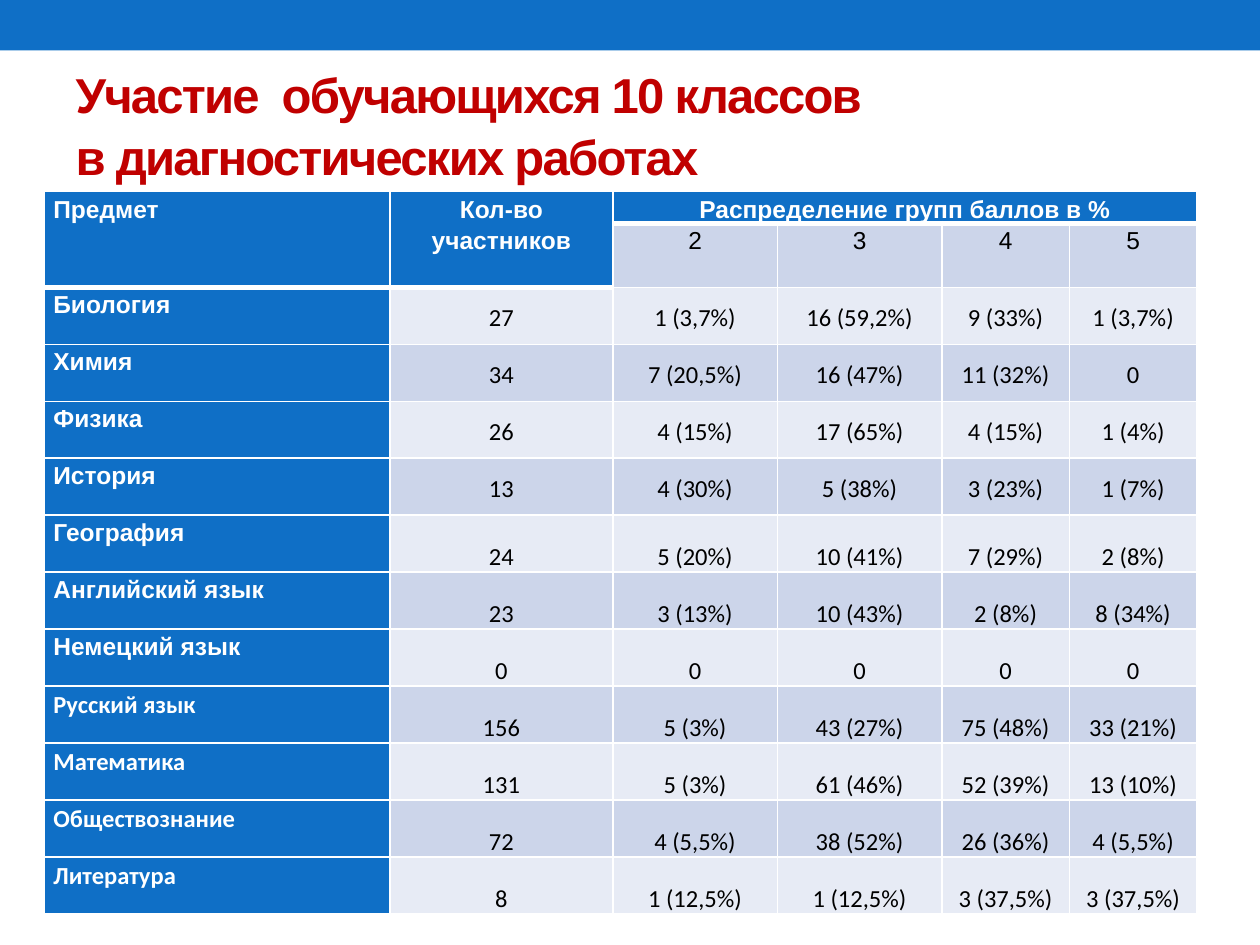
import pptx
import pptx.util
import pptx.dml.color
import pptx.enum.shapes
import pptx.enum.text
import pptx.oxml
import pptx.oxml.ns

Pt = pptx.util.Pt
ALIGN = pptx.enum.text.PP_ALIGN
ANCHOR = pptx.enum.text.MSO_ANCHOR

# Content
TITLE = ["Участие  обучающихся 10 классов", "в диагностических работах"]
SUBJECT_HEAD = ["Предмет"]
COUNT_HEAD = ["Кол-во", "участников"]
GROUP_HEAD = ["Распределение групп баллов в %"]
GRADES = ["2", "3", "4", "5"]
RESULTS = [
    ("Биология", "27", "1 (3,7%)", "16 (59,2%)", "9 (33%)", "1 (3,7%)"),
    ("Химия", "34", "7 (20,5%)", "16 (47%)", "11 (32%)", "0"),
    ("Физика", "26", "4 (15%)", "17 (65%)", "4 (15%)", "1 (4%)"),
    ("История", "13", "4 (30%)", "5 (38%)", "3 (23%)", "1 (7%)"),
    ("География", "24", "5 (20%)", "10 (41%)", "7 (29%)", "2 (8%)"),
    ("Английский язык", "23", "3 (13%)", "10 (43%)", "2 (8%)", "8 (34%)"),
    ("Немецкий язык", "0", "0", "0", "0", "0"),
    ("Русский язык", "156", "5 (3%)", "43 (27%)", "75 (48%)", "33 (21%)"),
    ("Математика", "131", "5 (3%)", "61 (46%)", "52 (39%)", "13 (10%)"),
    ("Обществознание", "72", "4 (5,5%)", "38 (52%)", "26 (36%)", "4 (5,5%)"),
    ("Литература", "8", "1 (12,5%)", "1 (12,5%)", "3 (37,5%)", "3 (37,5%)"),
]
MIDDLE_ROWS = 4    # later results sit at the bottom of their cells
ARIAL_SUBJECTS = 7  # later subjects are set in Calibri

COLORS = {"blue": "0F6FC6", "red": "C00000", "white": "FFFFFF",
          "black": "000000", "dark band": "CCD5EA", "light band": "E7EBF5"}
COLUMN_WIDTHS = [197.3, 127.4, 94, 94, 72.9, 72.9]
HEAD_HEIGHTS = [17, 36.6]
RESULT_HEIGHT = 32.55


def rgb(name):
    return pptx.dml.color.RGBColor.from_string(COLORS[name])


def set_borders(cell, bottom):
    properties = cell._tc.get_or_add_tcPr()
    for side, width in (("L", 1), ("R", 1), ("T", 1), ("B", bottom)):
        properties.append(pptx.oxml.parse_xml(
            f'<a:ln{side} {pptx.oxml.ns.nsdecls("a")} w="{Pt(width)}">'
            f'<a:solidFill><a:srgbClr val="{COLORS["white"]}"/></a:solidFill>'
            f'</a:ln{side}>'))


def style_cell(cell, fill, bottom=1):
    set_borders(cell, bottom)
    cell.fill.solid()
    cell.fill.fore_color.rgb = rgb(fill)
    cell.margin_left = cell.margin_right = Pt(5)
    cell.margin_top = cell.margin_bottom = 0


def write_cell(cell, lines, align, font="Arial", color="black", bold=False,
               anchor=ANCHOR.TOP):
    cell.vertical_anchor = anchor
    frame = cell.text_frame
    for index, line in enumerate(lines):
        para = frame.add_paragraph() if index else frame.paragraphs[0]
        para.alignment = align
        para.line_spacing = 1.15
        span = para.add_run()
        span.text = line
        span.font.name = font
        span.font.size = Pt(14)
        span.font.bold = bold
        span.font.color.rgb = rgb(color)


deck = pptx.Presentation()
deck.slide_width, deck.slide_height = Pt(720), Pt(540)
page = deck.slides.add_slide(deck.slide_layouts[5])

# Top banner
banner = page.shapes.add_shape(pptx.enum.shapes.MSO_SHAPE.RECTANGLE,
                               0, 0, Pt(720), Pt(28.8))
banner.shadow.inherit = False
banner.fill.solid()
banner.fill.fore_color.rgb = rgb("blue")
banner.line.fill.background()

# Title
title = page.shapes.title
title.left, title.top, title.width, title.height = Pt(36), Pt(31.7), Pt(648), Pt(77.8)
title.text_frame.auto_size = pptx.enum.text.MSO_AUTO_SIZE.NONE
title.text_frame.vertical_anchor = ANCHOR.MIDDLE
para = title.text_frame.paragraphs[0]
para.alignment = ALIGN.LEFT
para.line_spacing = 1.05
for index, line in enumerate(TITLE):
    if index:
        para.add_line_break()
    span = para.add_run()
    span.text = line
    span.font.name = "Arial"
    span.font.size = Pt(28)
    span.font.bold = True
    span.font.color.rgb = rgb("red")
    span.font._element.set("spc", "-100")

# Table grid
heights = HEAD_HEIGHTS + [RESULT_HEIGHT] * len(RESULTS)
table = page.shapes.add_table(len(heights), len(COLUMN_WIDTHS), Pt(25.5), Pt(109.5),
                              Pt(sum(COLUMN_WIDTHS)), Pt(sum(heights))).table
for column, width in zip(table.columns, COLUMN_WIDTHS):
    column.width = Pt(width)
for row, height in zip(table.rows, heights):
    row.height = Pt(height)

# Header rows
for row in range(2):
    for column in range(len(COLUMN_WIDTHS)):
        is_grade = row == 1 and column > 1
        style_cell(table.cell(row, column), "dark band" if is_grade else "blue",
                   1 if is_grade else 3)
table.cell(0, 0).merge(table.cell(1, 0))
table.cell(0, 1).merge(table.cell(1, 1))
table.cell(0, 2).merge(table.cell(0, 5))
heads = [(SUBJECT_HEAD, ALIGN.LEFT), (COUNT_HEAD, ALIGN.CENTER), (GROUP_HEAD, ALIGN.CENTER)]
for column, (lines, align) in enumerate(heads):
    write_cell(table.cell(0, column), lines, align, color="white", bold=True)
for column, grade in enumerate(GRADES, 2):
    write_cell(table.cell(1, column), [grade], ALIGN.CENTER)

# Result rows
for index, (subject, *values) in enumerate(RESULTS):
    row = index + len(HEAD_HEIGHTS)
    style_cell(table.cell(row, 0), "blue")
    write_cell(table.cell(row, 0), [subject], ALIGN.JUSTIFY,
               "Arial" if index < ARIAL_SUBJECTS else "Calibri", "white", True)
    for column, value in enumerate(values, 1):
        style_cell(table.cell(row, column), "dark band" if index % 2 else "light band")
        write_cell(table.cell(row, column), [value], ALIGN.CENTER, "Calibri",
                   anchor=ANCHOR.MIDDLE if index < MIDDLE_ROWS else ANCHOR.BOTTOM)

deck.save("out.pptx")
